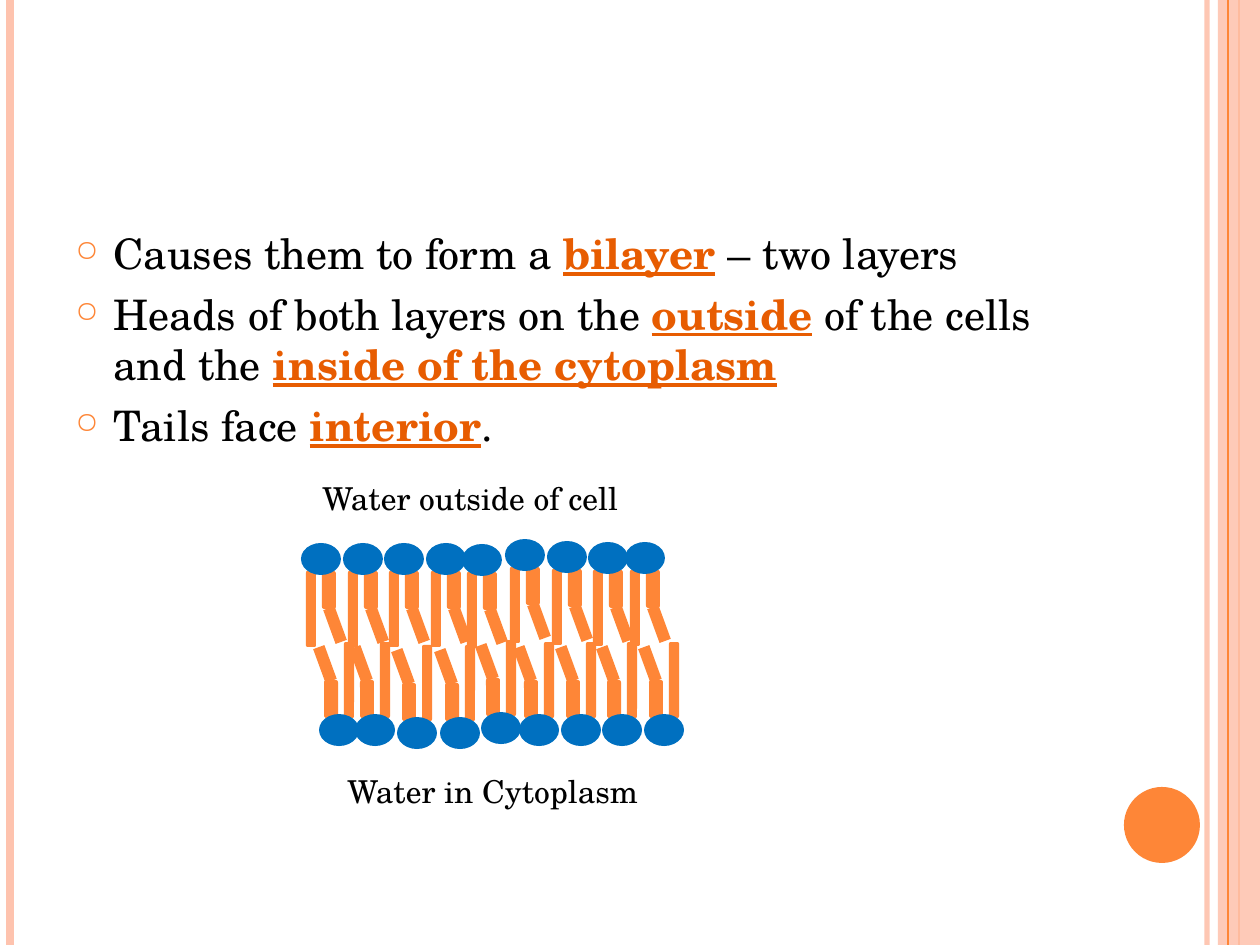
from lxml import etree
from pptx import Presentation
from pptx.dml.color import RGBColor
from pptx.enum.shapes import MSO_CONNECTOR, MSO_SHAPE
from pptx.enum.text import MSO_AUTO_SIZE
from pptx.oxml.ns import qn
from pptx.util import Emu, Pt

LINE = MSO_CONNECTOR.STRAIGHT
RECT, ROUND, OVAL = MSO_SHAPE.RECTANGLE, MSO_SHAPE.ROUNDED_RECTANGLE, MSO_SHAPE.OVAL
GROW = MSO_AUTO_SIZE.SHAPE_TO_FIT_TEXT
FONT = "TeX Gyre Schola"
C = {"orange": "FE8637", "peach": "FEC3AE", "blue": "0070C0",
     "term": "E75C01", "text": "000000"}
W, H = 1260, 945
HEAD_W, HEAD_H = 40, 32
BEND = 69.9

# Lipid parts relative to the head's top left: shape, x, y, w, h, turn, colour
LIPID = [
    (ROUND, 5, 28, 10, 76, 0, "orange"),
    (ROUND, 21, 28, 14, 38, 0, "orange"),
    (RECT, 16, 76, 36, 12, BEND, "orange"),
    (OVAL, 0, 0, HEAD_W, HEAD_H, 0, "blue"),
]
# Head positions of both layers
UPPER = [(301, 543), (343, 543), (384, 543), (426, 543), (462, 544),
         (505, 539), (547, 541), (588, 542), (625, 542)]
LOWER = [(644, 714), (602, 714), (561, 714), (519, 714), (481, 712),
         (440, 717), (397, 717), (355, 714), (319, 714)]

# Bullets as (text, is key term) runs
BULLETS = [
    [("Causes them to form a ", False), ("bilayer", True), (" – two layers", False)],
    [("Heads of both layers on the ", False), ("outside", True),
     (" of the cells and the ", False), ("inside of the cytoplasm", True)],
    [("Tails face ", False), ("interior", True), (".", False)],
]


def px(n):
    return Emu(round(n * 914400 / 126))


def rgb(name):
    return RGBColor.from_string(C[name])


def set_alpha(fill_parent, percent):
    clr = fill_parent.find(qn("a:solidFill")).find(qn("a:srgbClr"))
    etree.SubElement(clr, qn("a:alpha")).set("val", str(percent * 1000))


def add_rule(shapes, x, color, width, alpha=100):
    c = shapes.add_connector(LINE, px(x), 0, px(x), px(H))
    c.line.color.rgb = rgb(color)
    c.line.width = Pt(width)
    sp_pr = c._element.spPr
    if alpha < 100:
        set_alpha(sp_pr.find(qn("a:ln")), alpha)
    etree.SubElement(sp_pr, qn("a:effectLst"))


def add_solid(shapes, kind, x, y, w, h, color, turn=0, alpha=100):
    sp = shapes.add_shape(kind, px(x), px(y), px(w), px(h))
    sp.shadow.inherit = False
    sp.fill.solid()
    sp.fill.fore_color.rgb = rgb(color)
    sp.line.fill.background()
    sp.rotation = turn
    if alpha < 100:
        set_alpha(sp._element.spPr, alpha)


def add_layer(slide, heads, flipped=False):
    shapes = slide.shapes.add_group_shape().shapes
    for hx, hy in heads:
        for kind, dx, dy, w, h, turn, color in LIPID:
            if flipped:  # half a turn about the head's centre
                dx, dy, turn = HEAD_W - dx - w, HEAD_H - dy - h, turn + 180
            add_solid(shapes, kind, hx + dx, hy + dy, w, h, color, turn)


def add_text_frame(slide, x, y, w, h):
    tf = slide.shapes.add_textbox(px(x), px(y), px(w), px(h)).text_frame
    tf.word_wrap = True
    return tf


def add_run(p, text, size, term=False):
    r = p.add_run()
    r.text = text
    r.font.name = FONT
    r.font.size = Pt(size)
    r.font.bold = r.font.underline = term
    r.font.color.rgb = rgb("term" if term else "text")


def set_bullet(p):
    p.space_before = Pt(6)
    p_pr = p._p.get_or_add_pPr()
    p_pr.set("marL", str(px(38)))
    p_pr.set("indent", str(-px(38)))
    clr = etree.SubElement(p_pr, qn("a:buClr"))
    etree.SubElement(clr, qn("a:srgbClr")).set("val", C["orange"])
    etree.SubElement(p_pr, qn("a:buSzPct")).set("val", "70000")
    etree.SubElement(p_pr, qn("a:buChar")).set("char", "○")


def add_bullets(slide):
    tf = add_text_frame(slide, 63, 221, 1029, 672)
    for i, runs in enumerate(BULLETS):
        p = tf.add_paragraph() if i else tf.paragraphs[0]
        set_bullet(p)
        for text, term in runs:
            add_run(p, text, 24, term)


def add_label(slide, x, y, text):
    tf = add_text_frame(slide, x, y, 343, 50)
    tf.auto_size = GROW
    add_run(tf.paragraphs[0], text, 18)


def add_frame(slide):
    shapes = slide.shapes
    add_rule(shapes, 1207, "peach", 3, 93)
    add_rule(shapes, 10, "peach", 4.5)
    add_rule(shapes, 1239, "orange", 1.5)
    add_solid(shapes, RECT, 1218, 0, W - 1218, H, "peach", alpha=87)
    add_rule(shapes, 1228, "orange", 0.75)
    add_solid(shapes, OVAL, 1124, 787, 76, 76, "orange")


def main():
    prs = Presentation()
    prs.slide_width, prs.slide_height = px(W), px(H)
    slide = prs.slides.add_slide(prs.slide_layouts[6])
    # Side stripes and corner disc
    add_frame(slide)
    # Text
    add_bullets(slide)
    # Lipid bilayer between its two labels
    add_layer(slide, UPPER)
    add_layer(slide, LOWER, flipped=True)
    add_label(slide, 310, 473, "Water outside of cell")
    add_label(slide, 335, 766, "Water in Cytoplasm")
    prs.save("out.pptx")


if __name__ == "__main__":
    main()
